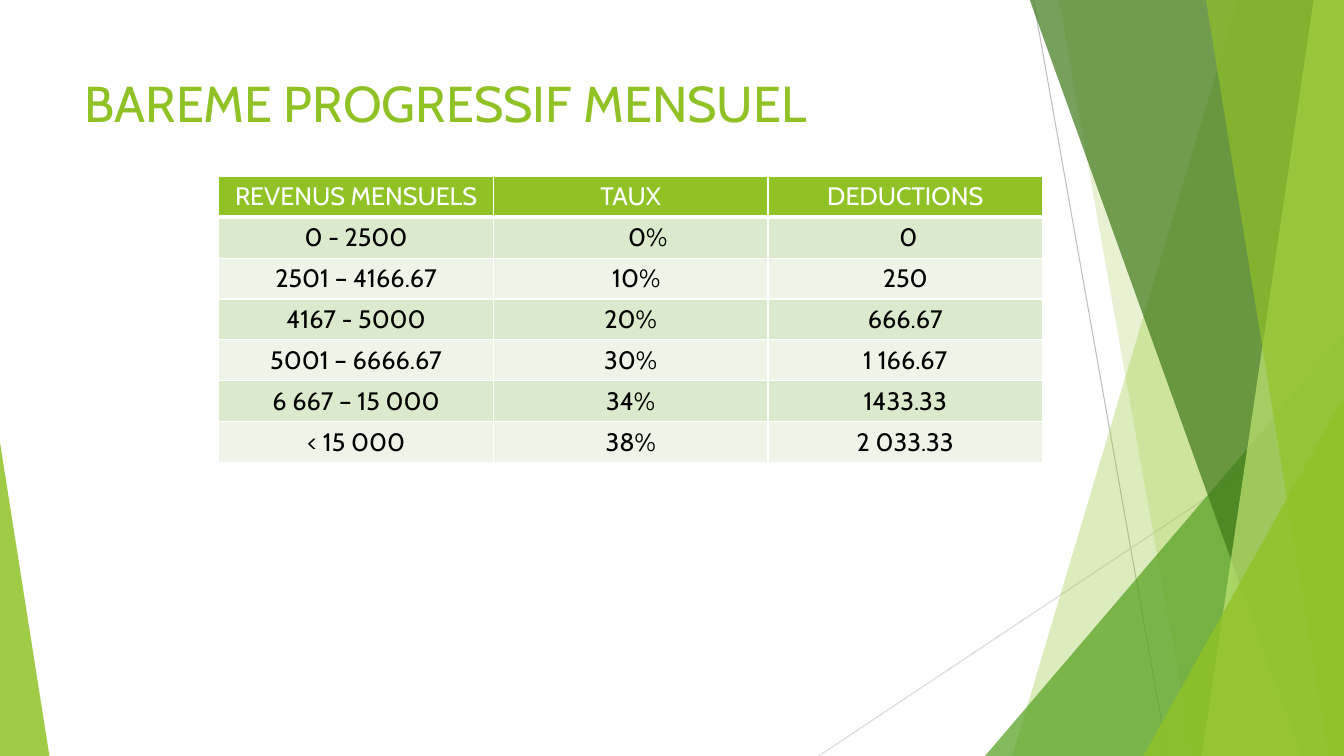
from dataclasses import dataclass

from lxml import etree
from pptx import Presentation
from pptx import util as u
from pptx.dml.color import RGBColor
from pptx.enum import shapes, text
from pptx.oxml import ns

LIME = RGBColor(0x90, 0xC2, 0x26)
PALE_LIME = RGBColor(0xC0, 0xE4, 0x74)
GREEN = RGBColor(0x54, 0xA0, 0x21)
DARK_GREEN = RGBColor(0x3F, 0x78, 0x19)
BAND_DARK = RGBColor(0xDB, 0xE9, 0xCD)
BAND_LIGHT = RGBColor(0xEE, 0xF4, 0xE8)
GREY = RGBColor(0xBF, 0xBF, 0xBF)
LIGHT_GREY = RGBColor(0xD9, 0xD9, 0xD9)
WHITE = RGBColor(0xFF, 0xFF, 0xFF)
BLACK = RGBColor(0, 0, 0)

FONT = "Cabin"
WIDTH, HEIGHT = 13.33, 7.5
TOP = -0.01


@dataclass
class Ray:
    start: tuple[float, float]
    end: tuple[float, float]
    color: RGBColor


@dataclass
class Band:
    """Strip reaching the right edge, cut by a slanted left side."""
    top_x: float
    bottom_x: float
    color: RGBColor
    opacity: int


@dataclass
class Corner:
    """Triangle standing on the bottom edge, apex at 0 (left) or 1 (right)."""
    left: float
    top: float
    width: float
    apex: float
    color: RGBColor
    opacity: int


@dataclass
class Bracket:
    income: str
    rate: str
    deduction: str
    rate_indent: float = 0
    deduction_indent: float = 0


RAYS = [
    Ray((10.25, 0), (11.58, HEIGHT), GREY),
    Ray((WIDTH, 4.03), (8.12, HEIGHT), LIGHT_GREY),
]
FACETS = [
    Band(12.28, 10.04, LIME, 30),
    Band(10.5, 11.83, LIME, 20),
    Corner(9.77, 3.33, 3.56, 1, GREEN, 72),
    Band(10.21, 12.91, DARK_GREEN, 70),
    Band(13.03, 11.92, PALE_LIME, 70),
    Band(11.96, 13.18, LIME, 65),
    Corner(11.34, 3.93, 1.99, 1, LIME, 80),
    Corner(0, 4.39, 0.49, 0, LIME, 85),
]
BRACKETS = [
    Bracket("REVENUS MENSUELS", "TAUX", "DEDUCTIONS"),
    Bracket("0 - 2500", "0%", "0", rate_indent=0.34, deduction_indent=0.06),
    Bracket("2501 – 4166.67", "10%", "250", rate_indent=0.11),
    Bracket("4167 - 5000", "20%", "666.67"),
    Bracket("5001 – 6666.67", "30%", "1 166.67"),
    Bracket("6 667 – 15 000", "34%", "1433.33"),
    Bracket("< 15 000", "38%", "2 033.33"),
]


def draw_ray(slide, ray: Ray) -> None:
    line = slide.shapes.add_connector(
        shapes.MSO_CONNECTOR.STRAIGHT,
        *(u.Inches(v) for v in ray.start + ray.end))
    line.line.color.rgb = ray.color
    line.line.width = u.Pt(0.75)
    etree.SubElement(line.element.spPr, ns.qn("a:effectLst"))


def draw_facet(slide, facet: Band | Corner) -> None:
    if isinstance(facet, Band):
        outline = [(facet.top_x, TOP), (WIDTH, TOP),
                   (WIDTH, HEIGHT), (facet.bottom_x, HEIGHT)]
        points = [(u.Inches(x), u.Inches(y)) for x, y in outline]
        builder = slide.shapes.build_freeform(*points[0], scale=1.0)
        builder.add_line_segments(points[1:], close=True)
        panel = builder.convert_to_shape()
    else:
        panel = slide.shapes.add_shape(
            shapes.MSO_SHAPE.ISOSCELES_TRIANGLE,
            u.Inches(facet.left), u.Inches(facet.top),
            u.Inches(facet.width), u.Inches(HEIGHT - facet.top))
        panel.adjustments[0] = facet.apex
    panel.shadow.inherit = False
    panel.line.fill.background()
    panel.fill.solid()
    panel.fill.fore_color.rgb = facet.color
    tint = panel.element.spPr.find(
        f"{ns.qn('a:solidFill')}/{ns.qn('a:srgbClr')}")
    etree.SubElement(tint, ns.qn("a:alpha"), val=str(facet.opacity * 1000))


def add_words(paragraph, words: str, size: float, color: RGBColor) -> None:
    run = paragraph.add_run()
    run.text = words
    run.font.name = FONT
    run.font.size = u.Pt(size)
    run.font.bold = False
    run.font.color.rgb = color


def draw_title(slide) -> None:
    title = slide.shapes.add_textbox(
        u.Inches(0.74), u.Inches(0.67), u.Inches(9.4), u.Inches(1.44))
    frame = title.text_frame
    frame.word_wrap = True
    frame.vertical_anchor = text.MSO_ANCHOR.TOP
    add_words(frame.paragraphs[0], "BAREME PROGRESSIF MENSUEL", 36, LIME)


def set_borders(cell, bottom: float) -> None:
    properties = cell._tc.get_or_add_tcPr()
    for side, points in (("L", 1), ("R", 1), ("T", 1), ("B", bottom)):
        edge = etree.SubElement(
            properties, ns.qn(f"a:ln{side}"), w=str(u.Pt(points)))
        fill = etree.SubElement(edge, ns.qn("a:solidFill"))
        etree.SubElement(fill, ns.qn("a:srgbClr"), val=str(WHITE))


def draw_scale(slide, brackets: list[Bracket]) -> None:
    scale = slide.shapes.add_table(
        len(brackets), 3, u.Inches(2.17), u.Inches(1.75),
        u.Inches(8.17), u.Inches(2.84)).table
    for row, bracket in enumerate(brackets):
        header = row == 0
        band = LIME if header else BAND_DARK if row % 2 else BAND_LIGHT
        entries = [(bracket.income, 0),
                   (bracket.rate, bracket.rate_indent),
                   (bracket.deduction, bracket.deduction_indent)]
        for column, (words, indent) in enumerate(entries):
            cell = scale.cell(row, column)
            set_borders(cell, bottom=3 if header else 1)
            cell.fill.solid()
            cell.fill.fore_color.rgb = band
            paragraph = cell.text_frame.paragraphs[0]
            paragraph.alignment = text.PP_ALIGN.CENTER
            if indent:
                paragraph._p.get_or_add_pPr().set(
                    "marL", str(u.Inches(indent)))
            add_words(paragraph, words, 18, WHITE if header else BLACK)


def main() -> None:
    deck = Presentation()
    deck.slide_width, deck.slide_height = u.Inches(WIDTH), u.Inches(HEIGHT)
    slide = deck.slides.add_slide(deck.slide_layouts[6])

    # Background rays and green facets
    for ray in RAYS:
        draw_ray(slide, ray)
    for facet in FACETS:
        draw_facet(slide, facet)

    # Title and tax scale
    draw_title(slide)
    draw_scale(slide, BRACKETS)

    deck.save("out.pptx")


if __name__ == "__main__":
    main()
